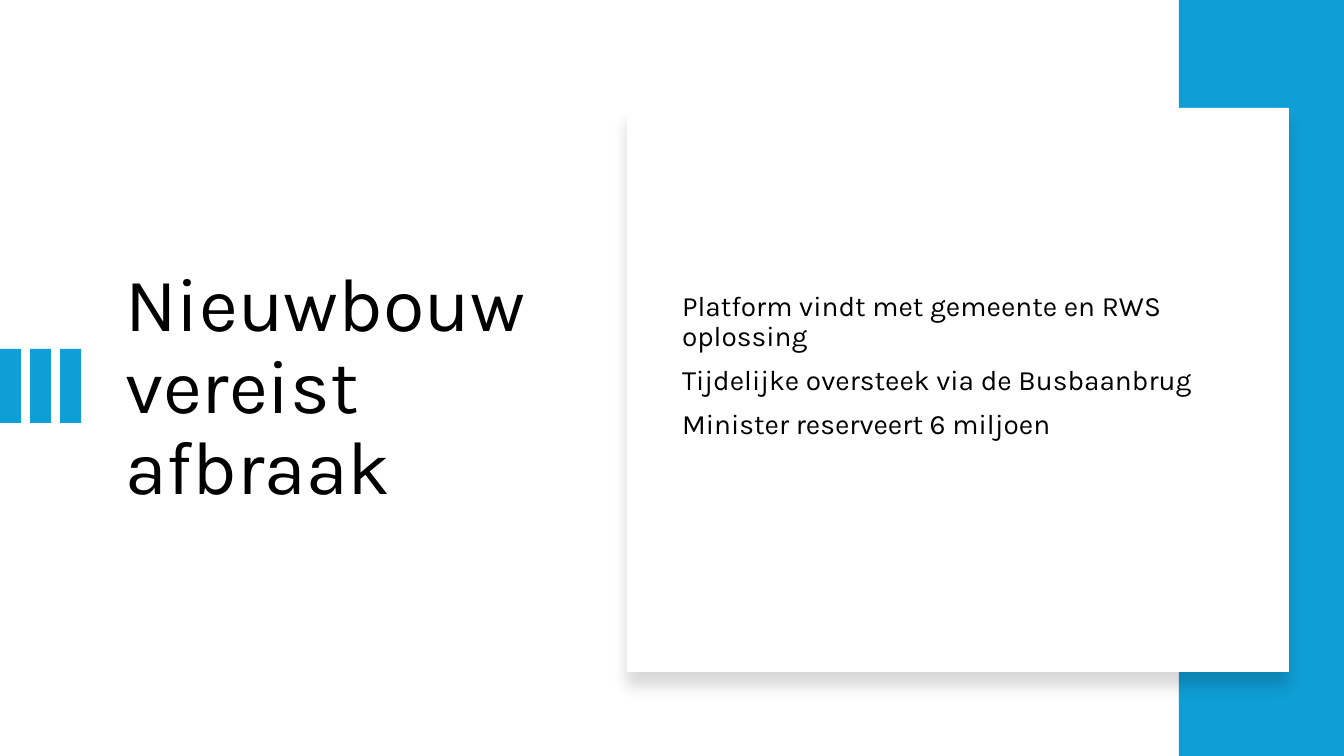
from lxml.etree import SubElement
from pptx import Presentation
from pptx.dml.color import RGBColor
from pptx.enum.shapes import MSO_SHAPE
from pptx.enum.text import MSO_ANCHOR, MSO_AUTO_SIZE, PP_ALIGN
from pptx.oxml.ns import qn
from pptx.util import Pt

TITLE = ["Nieuwbouw vereist afbraak"]
POINTS = [
    "Platform vindt met gemeente en RWS oplossing",
    "Tijdelijke oversteek via de Busbaanbrug",
    "Minister reserveert 6 miljoen",
]
FONT = "Karla"
BLUE = RGBColor(0x0F, 0x9E, 0xD5)
WHITE = RGBColor(0xFF, 0xFF, 0xFF)
BLACK = RGBColor(0, 0, 0)
WIDE, HIGH = 1344, 756
BAR, STEP = 21, 30


def px(n):
    return round(n * 914400 / 100.8)


def place(shape, x, y, w, h):
    shape.left, shape.top, shape.width, shape.height = map(px, (x, y, w, h))


def block(x, y, w, h, fill):
    shape = slide.shapes.add_shape(MSO_SHAPE.RECTANGLE, *map(px, (x, y, w, h)))
    shape.shadow.inherit = False
    shape.fill.solid()
    shape.fill.fore_color.rgb = fill
    shape.line.fill.background()
    return shape


def shade(shape):
    list_ = shape._element.spPr.find(qn("a:effectLst"))
    outer = SubElement(list_, qn("a:outerShdw"), blurRad=str(Pt(11)),
                       dist=str(Pt(10)), dir="5400000", algn="t", rotWithShape="0")
    tint = SubElement(outer, qn("a:srgbClr"), val=str(BLACK))
    SubElement(tint, qn("a:alpha"), val="15000")


def write(shape, lines, size, gap):
    frame = shape.text_frame
    frame.word_wrap = True
    frame.auto_size = MSO_AUTO_SIZE.NONE
    frame.vertical_anchor = MSO_ANCHOR.MIDDLE
    for i, line in enumerate(lines):
        para = frame.add_paragraph() if i else frame.paragraphs[0]
        props = para._p.get_or_add_pPr()
        props.set("marL", "0")
        props.set("indent", "0")
        SubElement(props, qn("a:buNone"))
        para.alignment = PP_ALIGN.LEFT
        para.line_spacing = 0.9
        para.space_before = Pt(gap if i else 0)
        run = para.add_run()
        run.text = line
        run.font.name = FONT
        run.font.size = Pt(size)
        run.font.color.rgb = BLACK


deck = Presentation()
deck.slide_width, deck.slide_height = px(WIDE), px(HIGH)
slide = deck.slides.add_slide(deck.slide_layouts[1])
title, body = slide.placeholders

place(title, 115, 147, 429, 483)
write(title, TITLE, 54, 0)

for i in range(3):
    block(i * STEP, 349, BAR, 74, BLUE)
block(1179, 0, WIDE - 1179, HIGH, BLUE)
shade(block(627, 108, 662, 564, WHITE))

place(body, 672, 147, 580, 483)
write(body, POINTS, 20, 10)
body.text_frame.margin_bottom = px(49)
slide.shapes._spTree.append(body._element)

deck.save("out.pptx")
